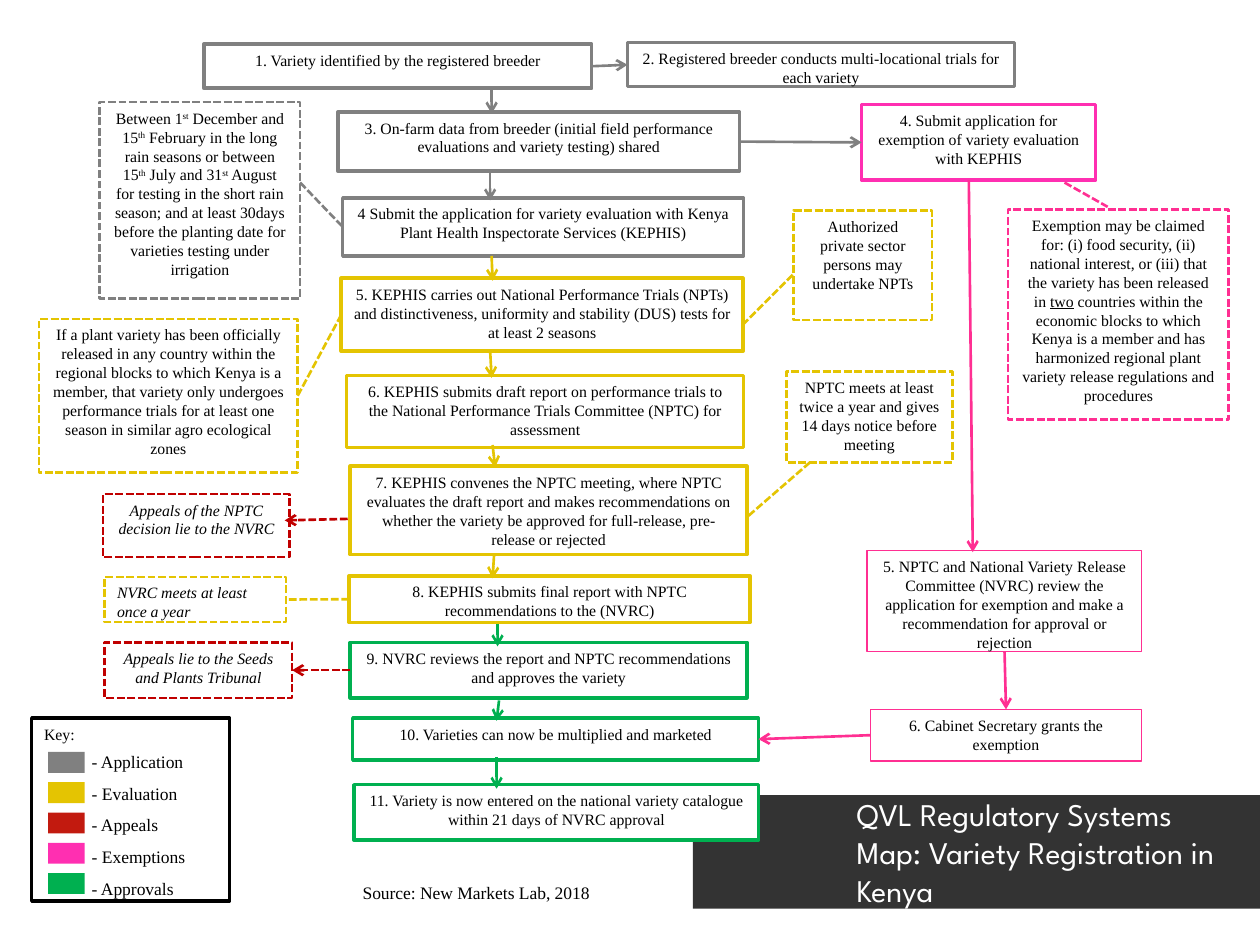
"""Build a one-slide flow chart of variety registration in Kenya."""
from dataclasses import dataclass

from lxml import etree
from pptx import Presentation
from pptx.dml.color import RGBColor
from pptx.enum.dml import MSO_LINE
from pptx.enum.shapes import MSO_CONNECTOR, MSO_SHAPE
from pptx.enum.text import MSO_ANCHOR, PP_ALIGN
from pptx.oxml.ns import qn
from pptx.util import Cm, Pt

RECTANGLE = MSO_SHAPE.RECTANGLE
STRAIGHT = MSO_CONNECTOR.STRAIGHT
DASH = MSO_LINE.SQUARE_DOT
LEFT, CENTER = PP_ALIGN.LEFT, PP_ALIGN.CENTER
TOP, MIDDLE = MSO_ANCHOR.TOP, MSO_ANCHOR.MIDDLE
UP_SIDE, LEFT_SIDE, DOWN_SIDE, RIGHT_SIDE = range(4)


@dataclass(frozen=True)
class Theme:
    application: str = "808080"
    evaluation: str = "E4C402"
    appeals: str = "C00000"
    appeals_key: str = "C21A0F"
    exemptions: str = "FF2F92"
    exemptions_key: str = "FF2FB1"
    approvals: str = "00B050"
    banner: str = "333333"
    black: str = "000000"
    white: str = "FFFFFF"
    body_font: str = "Times New Roman"
    title_font: str = "League Spartan"
    body_size: float = 9
    key_size: float = 10
    title_size: float = 18
    heavy: float = 2
    medium: float = 1.5
    thin: float = 0.75


theme = Theme()
deck = Presentation()
deck.slide_width, deck.slide_height = Cm(25.4), Cm(19.05)
page = deck.slides.add_slide(deck.slide_layouts[6])


def add_block(place, fill=None, line=None, width=theme.heavy, dashed=False):
    block = page.shapes.add_shape(RECTANGLE, *map(Cm, place))
    block.shadow.inherit = False
    if fill:
        block.fill.solid()
        block.fill.fore_color.rgb = RGBColor.from_string(fill)
    else:
        block.fill.background()
    if line:
        block.line.color.rgb = RGBColor.from_string(line)
        block.line.width = Pt(width)
        if dashed:
            block.line.dash_style = DASH
    else:
        block.line.fill.background()
    return block


def write(box, text, size=theme.body_size, font=theme.body_font, color=theme.black,
          align=LEFT, anchor=TOP, italic=False, spacing=None, accent="superscript"):
    """Fill a box; text between bars takes the accent."""
    frame = box.text_frame
    frame.word_wrap = True
    frame.vertical_anchor = anchor
    for index, content in enumerate(text.split("\n")):
        para = frame.add_paragraph() if index else frame.paragraphs[0]
        para.alignment = align
        if spacing:
            para.line_spacing = spacing
        for position, piece in enumerate(content.split("|")):
            span = para.add_run()
            span.text = piece
            span.font.size = Pt(size)
            span.font.name = font
            span.font.italic = italic
            span.font.color.rgb = RGBColor.from_string(color)
            if position % 2 and accent == "underline":
                span.font.underline = True
            elif position % 2:
                span.font._element.set("baseline", "30000")


banner = add_block((13.97, 16.03, 11.43, 2.29), theme.banner)
banner.text_frame.margin_left, banner.text_frame.margin_right = Cm(3.3), Cm(0.76)
write(banner, "QVL Regulatory Systems Map: Variety Registration in Kenya", size=theme.title_size,
      font=theme.title_font, color=theme.white, anchor=MIDDLE)

steps = [
    ("identify", theme.application, (4.11, 0.89, 7.82, 0.89),
     "1. Variety identified by the registered breeder"),
    ("trials", theme.application, (12.65, 0.86, 7.8, 0.89),
     "2. Registered breeder conducts multi-locational trials for each variety"),
    ("farm data", theme.application, (6.81, 2.26, 8.1, 1.19),
     "3. On-farm data from breeder (initial field performance evaluations and variety testing) shared"),
    ("apply", theme.application, (6.91, 3.99, 8.08, 1.17),
     "4 Submit the application for variety evaluation with Kenya Plant Health Inspectorate Services (KEPHIS)"),
    ("exempt", theme.exemptions_key, (17.37, 2.11, 4.72, 1.52),
     "4. Submit application for exemption of variety evaluation with KEPHIS"),
    ("tests", theme.evaluation, (6.88, 5.61, 8.1, 1.47),
     "5. KEPHIS carries out National Performance Trials (NPTs) and distinctiveness, uniformity "
     "and stability (DUS) tests for at least 2 seasons"),
    ("draft", theme.evaluation, (6.99, 7.57, 8, 1.45),
     "6. KEPHIS submits draft report on performance trials to the National Performance Trials "
     "Committee (NPTC) for assessment"),
    ("meeting", theme.evaluation, (7.06, 9.4, 8, 1.78),
     "7. KEPHIS convenes the NPTC meeting, where NPTC evaluates the draft report and makes "
     "recommendations on whether the variety be approved for full-release, pre-release or rejected"),
    ("final", theme.evaluation, (7.04, 11.61, 8.08, 0.94),
     "8. KEPHIS submits final report with NPTC recommendations to the (NVRC)"),
    ("review", theme.exemptions, (17.48, 11.1, 5.54, 2.03),
     "5. NPTC and National Variety Release Committee (NVRC) review the application for exemption "
     "and make a recommendation for approval or rejection"),
    ("grant", theme.exemptions, (17.55, 14.3, 5.46, 1.04),
     "6. Cabinet Secretary grants the exemption"),
    ("approve", theme.approvals, (7.06, 12.95, 8, 1.12),
     "9. NVRC reviews the report and NPTC recommendations and approves the variety"),
    ("market", theme.approvals, (7.11, 14.48, 8.18, 0.84),
     "10. Varieties can now be multiplied and marketed"),
    ("catalogue", theme.approvals, (7.14, 15.82, 8.15, 1.12),
     "11. Variety is now entered on the national variety catalogue within 21 days of NVRC approval"),
]
boxes = {}
for name, color, place, text in steps:
    light = color == theme.exemptions
    boxes[name] = add_block(place, None if light else theme.white, color,
                            theme.thin if light else theme.heavy)
    write(boxes[name], text, align=CENTER)

notes = [
    ("dates", theme.application, (2.01, 2.06, 4.04, 3.96), {},
     "Between 1|st| December and 15|th| February in the long rain seasons or between 15|th| July "
     "and 31|st| August for testing in the short rain season; and at least 30days before the "
     "planting date for varieties testing under irrigation"),
    ("regional", theme.evaluation, (0.79, 6.43, 5.21, 3.1), {},
     "If a plant variety has been officially released in any country within the regional blocks "
     "to which Kenya is a member, that variety only undergoes performance trials for at least one "
     "season in similar agro ecological zones"),
    ("tribunal", theme.appeals, (2.11, 12.95, 3.78, 1.12), {"italic": True},
     "Appeals lie to the Seeds and Plants Tribunal"),
    ("appeals", theme.appeals, (2.08, 9.96, 3.76, 1.27), {"italic": True},
     "Appeals of the NPTC decision lie to the NVRC"),
    ("yearly", theme.evaluation, (2.11, 11.63, 3.66, 0.91), {"italic": True, "align": LEFT},
     "NVRC meets at least once a year"),
    ("private", theme.evaluation, (16, 4.24, 2.79, 2.21), {},
     "Authorized private sector persons may undertake NPTs"),
    ("grounds", theme.exemptions, (20.32, 4.22, 4.45, 4.24), {"accent": "underline"},
     "Exemption may be claimed for: (i) food security, (ii) national interest, or (iii) that the "
     "variety has been released in |two| countries within the economic blocks to which Kenya is a "
     "member and has harmonized regional plant variety release regulations and procedures"),
    ("notice", theme.evaluation, (15.85, 7.49, 3.35, 1.83), {},
     "NPTC meets at least twice a year and gives 14 days notice before meeting"),
]
for name, color, place, style, text in notes:
    fill = None if color in (theme.appeals, theme.exemptions) else theme.white
    boxes[name] = add_block(place, fill, color, theme.medium, dashed=True)
    write(boxes[name], text, **{"align": CENTER, **style})

write(add_block((0.64, 14.48, 3.99, 3.68), theme.white, theme.black), "Key:")
key = {"Application": theme.application, "Evaluation": theme.evaluation,
       "Appeals": theme.appeals_key, "Exemptions": theme.exemptions_key,
       "Approvals": theme.approvals}
for row, color in enumerate(key.values()):
    add_block((0.97, 15.16 + 0.61 * row, 0.74, 0.42), color)
labels = page.shapes.add_textbox(Cm(1.6), Cm(14.81), Cm(4.7), Cm(2.69))
write(labels, "\n".join(f"- {label}" for label in key), size=theme.key_size, spacing=1.5)

links = [
    (theme.application, "arrow", ("identify", RIGHT_SIDE), ("trials", LEFT_SIDE)),
    (theme.application, "arrow", (9.91, 1.78), (9.91, 2.29)),
    (theme.application, "arrow", ("farm data", RIGHT_SIDE), ("exempt", LEFT_SIDE)),
    (theme.application, "arrow", (9.88, 3.48), (9.88, 4.04)),
    (theme.exemptions, "arrow", (19.53, 3.63), (19.61, 11.13)),
    (theme.evaluation, "arrow", (9.91, 5.16), (9.93, 5.66)),
    (theme.evaluation, "arrow", (9.88, 7.06), (9.91, 7.62)),
    (theme.evaluation, "arrow", (9.93, 8.97), (9.98, 9.42)),
    (theme.evaluation, "arrow", (9.96, 11.18), (9.93, 11.66)),
    (theme.approvals, "arrow", (10.03, 12.57), (10.03, 13.03)),
    (theme.approvals, "arrow", (10.06, 14.12), (10.01, 14.53)),
    (theme.approvals, "arrow", (10.01, 15.27), (10.01, 15.9)),
    (theme.exemptions, "arrow", ("review", DOWN_SIDE), ("grant", UP_SIDE)),
    (theme.exemptions, "arrow", ("grant", LEFT_SIDE), ("market", RIGHT_SIDE)),
    (theme.appeals, "dashed arrow", (7.01, 10.46), (5.74, 10.49)),
    (theme.appeals, "dashed arrow", ("approve", LEFT_SIDE), ("tribunal", RIGHT_SIDE)),
    (theme.evaluation, "dashed", (15.98, 5.54), (14.99, 6.53)),
    (theme.evaluation, "dashed", (16.33, 9.32), (15.04, 10.44)),
    (theme.evaluation, "dashed", ("final", LEFT_SIDE), ("yearly", RIGHT_SIDE)),
    (theme.application, "dashed", (6.05, 3.68), ("apply", LEFT_SIDE)),
    (theme.evaluation, "dashed", ("tests", LEFT_SIDE), ("regional", RIGHT_SIDE)),
    (theme.exemptions, "dashed", (21.46, 3.68), (22.33, 4.17)),
]
for color, style, start, end in links:
    points = [(0, 0) if point[0] in boxes else point for point in (start, end)]
    link = page.shapes.add_connector(STRAIGHT, *(Cm(value) for point in points for value in point))
    for point, join in ((start, link.begin_connect), (end, link.end_connect)):
        if point[0] in boxes:
            join(boxes[point[0]], point[1])
    link.line.color.rgb = RGBColor.from_string(color)
    link.line.width = Pt(theme.medium)
    if "dashed" in style:
        link.line.dash_style = DASH
    if "arrow" in style:
        etree.SubElement(link.line._get_or_add_ln(), qn("a:tailEnd"), type="arrow")
    etree.SubElement(link._element.spPr, qn("a:effectLst"))

source = page.shapes.add_textbox(Cm(7.06), Cm(17.65), Cm(7.92), Cm(0.53))
write(source, "Source: New Markets Lab, 2018", size=theme.key_size)

deck.save("out.pptx")
